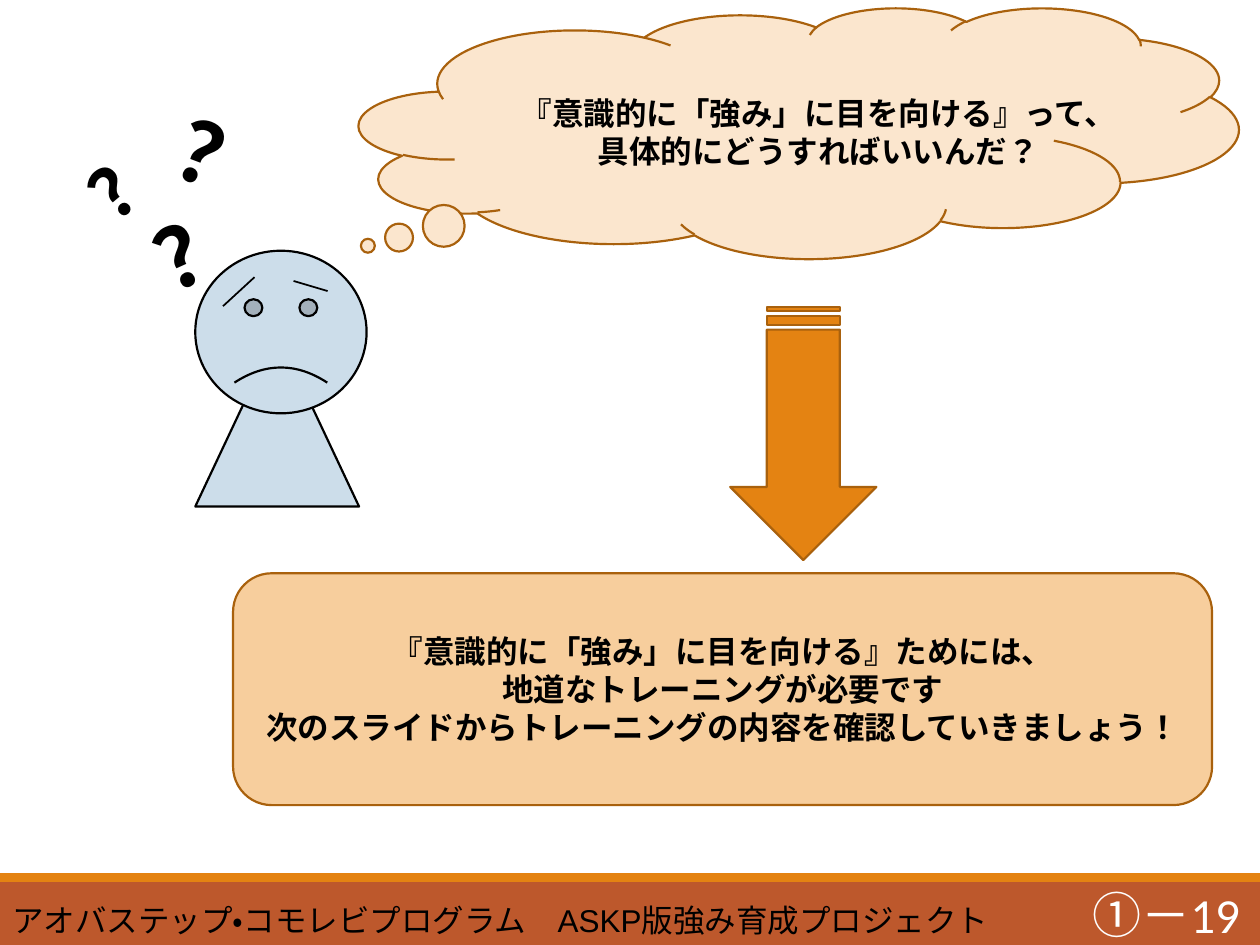
from pptx import Presentation
from pptx.dml.color import RGBColor
from pptx.enum.lang import MSO_LANGUAGE_ID
from pptx.enum.shapes import MSO_CONNECTOR, MSO_SHAPE
from pptx.enum.text import MSO_ANCHOR, MSO_AUTO_SIZE, PP_ALIGN
from pptx.oxml.ns import qn
from pptx.util import Inches, Pt

LEFT, CENTER, RIGHT = PP_ALIGN.LEFT, PP_ALIGN.CENTER, PP_ALIGN.RIGHT
TOP, MIDDLE = MSO_ANCHOR.TOP, MSO_ANCHOR.MIDDLE
JAPANESE = MSO_LANGUAGE_ID.JAPANESE
BLACK, WHITE = "000000", "FFFFFF"
ORANGE, BROWN, RUST = "E48312", "A9610D", "BD582C"
BODY_BLUE, CLOUD_FILL, ADVICE_FILL = "CCDDEA", "FBE6CE", "F7CE9D"

QUESTION = ["『意識的に「強み」に目を向ける』って、", "具体的にどうすればいいんだ？"]
ADVICE = [
    "『意識的に「強み」に目を向ける』ためには、",
    "地道なトレーニングが必要です",
    "次のスライドからトレーニングの内容を確認していきましょう！",
]
FOOTER = "アオバステップ・コモレビプログラム　ASKP版強み育成プロジェクト"
PAGE_NUMBER = "①－19"

FOOTER_BANDS = [((0, 7, 10, 0.5), RUST), ((0, 6.93, 10, 0.07), ORANGE)]
EYEBROWS = [((2.02, 2.2), (1.77, 2.43)), ((2.6, 2.31), (2.33, 2.23))]
QUESTION_MARKS = [  # box, rotation, size
    ((1.11, 1.38, 1.49, 0.91), 335.7, 48),
    ((1.3, 0.91, 1.49, 0.91), 20.6, 48),
    ((0.53, 0.81, 1.49, 0.77), 320, 40),
]


def color(hex_value):
    return RGBColor.from_string(hex_value)


def add_shape(kind, box, fill, line=None, adjustments=()):
    shape = slide.shapes.add_shape(kind, *map(Inches, box))
    shape.shadow.inherit = False
    shape.fill.solid()
    shape.fill.fore_color.rgb = color(fill)
    if line:
        shape.line.color.rgb = color(line)
        shape.line.width = Pt(1.25)
    else:
        shape.line.fill.background()
    for index, value in enumerate(adjustments):
        shape.adjustments[index] = value
    return shape


def write(shape, lines, size, align=LEFT, bold=False, font="Calibri",
          font_color=BLACK, anchor=TOP):
    frame = shape.text_frame
    frame.word_wrap = True
    frame.vertical_anchor = anchor
    for index, line in enumerate(lines):
        paragraph = frame.add_paragraph() if index else frame.paragraphs[0]
        paragraph.alignment = align
        run = paragraph.add_run()
        run.text = line
        run.font.language_id = JAPANESE
        run.font.name = font
        run.font.size = Pt(size)
        run.font.bold = bold
        run.font.color.rgb = color(font_color)


def add_text(box, lines, size, grow=True, **style):
    text_box = slide.shapes.add_textbox(*map(Inches, box))
    write(text_box, lines, size, **style)
    if grow:
        text_box.text_frame.auto_size = MSO_AUTO_SIZE.SHAPE_TO_FIT_TEXT
    return text_box


def add_eyebrow(start, end):
    eyebrow = slide.shapes.add_connector(
        MSO_CONNECTOR.STRAIGHT, *map(Inches, start + end))
    eyebrow.line.color.rgb = color(BLACK)
    eyebrow.line.width = Pt(1)
    properties = eyebrow._element.spPr
    properties.append(properties.makeelement(qn("a:effectLst"), {}))


prs = Presentation()
prs.slide_width, prs.slide_height = Inches(10), Inches(7.5)
slide = prs.slides.add_slide(prs.slide_layouts[6])

for band_box, band_fill in FOOTER_BANDS:
    add_shape(MSO_SHAPE.RECTANGLE, band_box, band_fill)

# Worried figure
add_shape(MSO_SHAPE.ISOSCELES_TRIANGLE, (1.55, 2.64, 1.3, 1.38), BODY_BLUE, BLACK)
add_text((8.4, 6.96, 1.54, 0.58), [PAGE_NUMBER], 28, grow=False, align=RIGHT,
         font_color=WHITE, anchor=MIDDLE)
add_shape(MSO_SHAPE.SMILEY_FACE, (1.55, 1.99, 1.36, 1.29), BODY_BLUE, BLACK, [-0.05])
for start, end in EYEBROWS:
    add_eyebrow(start, end)

# Thought, arrow and advice
add_shape(MSO_SHAPE.CLOUD_CALLOUT, (2.85, 0.06, 6.98, 1.99), CLOUD_FILL, BROWN,
          [-0.49, 0.45])
advice = add_shape(MSO_SHAPE.ROUNDED_RECTANGLE, (1.85, 4.55, 7.77, 1.84),
                   ADVICE_FILL, BROWN)
write(advice, ADVICE, 18, align=CENTER, bold=True, anchor=MIDDLE)
arrow = add_shape(MSO_SHAPE.STRIPED_RIGHT_ARROW, (5.37, 2.86, 2.01, 1.16),
                  ORANGE, BROWN)
arrow.rotation = 90

for mark_box, rotation, size in QUESTION_MARKS:
    add_text(mark_box, ["？"], size, bold=True).rotation = rotation
add_text((3.48, 0.7, 6.03, 0.71), QUESTION, 18, align=CENTER, bold=True)
add_text((0, 7.1, 8.35, 0.4), [FOOTER], 18, font="Arial")

prs.save("out.pptx")
